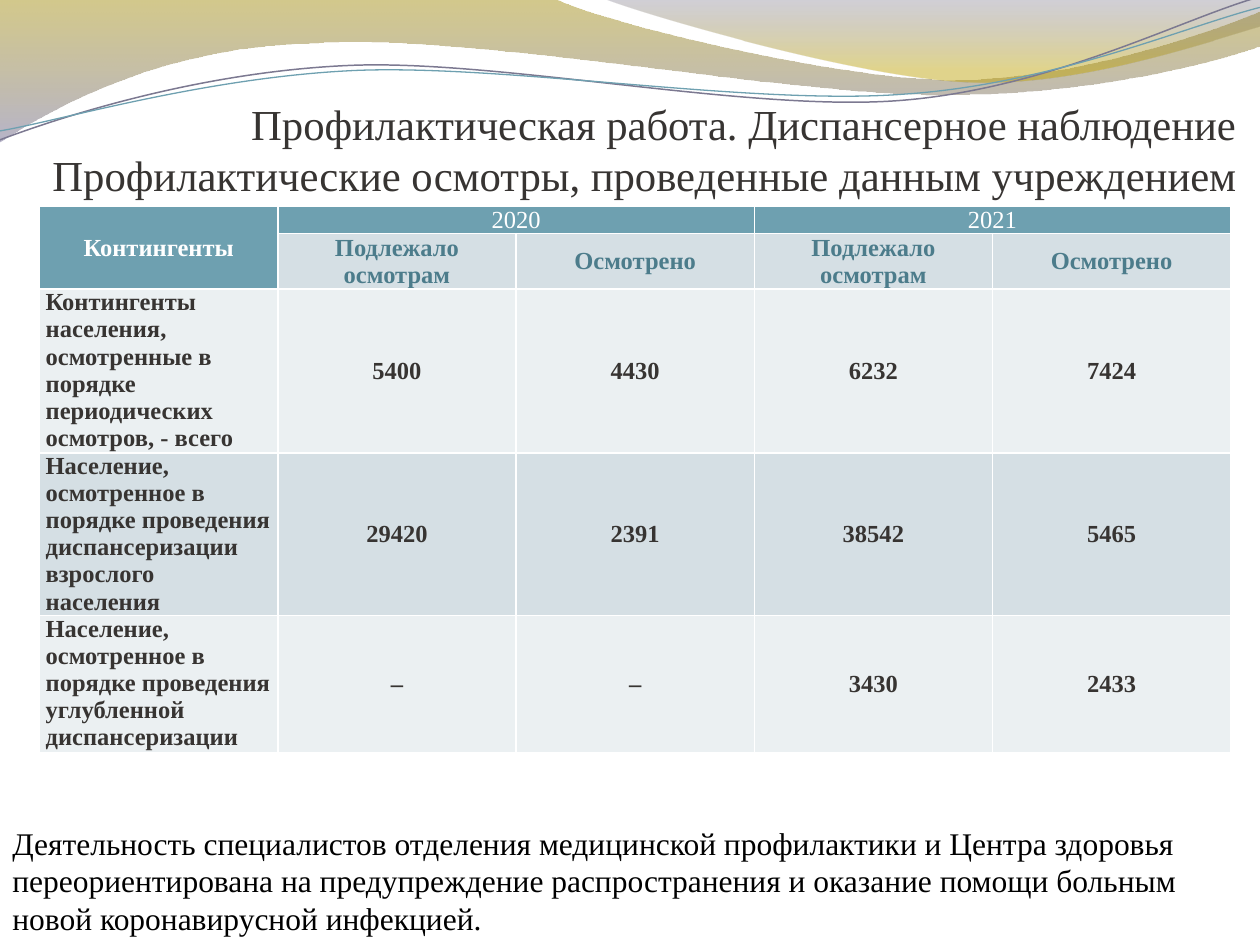
import pptx
import pptx.util
import pptx.dml.color
import pptx.enum.text
import pptx.oxml
import pptx.oxml.ns

Cm, Pt = pptx.util.Cm, pptx.util.Pt
Align, Anchor = pptx.enum.text.PP_ALIGN, pptx.enum.text.MSO_ANCHOR
Fit = pptx.enum.text.MSO_AUTO_SIZE
SPACE = pptx.oxml.ns.nsdecls("a")

INK = {
    "olive": "9E8700", "mauve": "7B769C", "plum": "66627C", "gold": "BDA100",
    "violet": "7C7991", "teal": "6EA0B0", "deep": "4C7C8B", "dark": "373432",
    "pale": "EBF0F2", "mist": "D5DFE4", "white": "FFFFFF", "black": "000000",
}

# Wave outlines in cm: a pair is a corner, six numbers are a Bezier curve
BANDS = [
    ([(0, 0), (11.18, -0.03), (12.09, 0.43, 16.87, 1.6, 19.25, 1.6),
      (21.67, 1.6, 24.33, 0.66, 25.4, 0.23), (25.43, 0.91),
      (24.97, 1.12, 22.1, 1.93, 18.95, 1.91),
      (15.8, 1.91, 9.7, 0.71, 6.53, 0.86),
      (3.28, 0.91, 1.17, 2.11, -0.03, 2.87)],
     [(0, "olive", 45), (1, "mauve", 55)]),
    ([(12.17, -0.03), (12.93, 0.28, 17.32, 1.57, 19.53, 1.65),
      (21.74, 1.75, 24.41, 0.81, 25.4, 0.53), (25.4, 0)],
     [(0, "plum", 30), (0.8, "gold", 45)]),
]
LINES = [
    ([(0, 2.82), (1.22, 2.36, 4.01, 1.45, 7.04, 1.32),
      (10.03, 1.19, 15.06, 2.26, 18.11, 2.03),
      (21.16, 1.8, 23.83, 0.38, 25.35, -0.05)], "violet", 0.85),
    ([(0, 2.64), (1.19, 2.44, 4.17, 1.55, 7.19, 1.42),
      (10.24, 1.3, 15.16, 2.13, 18.21, 1.9),
      (21.23, 1.7, 23.9, 0.53, 25.4, 0.15)], "teal", 0.75),
]

HEAD = "Профилактическая работа. Диспансерное наблюдение\vПрофилактические осмотры, проведенные данным учреждением"
NOTE = "Деятельность специалистов отделения медицинской профилактики и Центра здоровья переориентирована на предупреждение распространения и оказание помощи больным новой коронавирусной инфекцией."
ROWS = [
    ["Контингенты", "2020", "", "2021", ""],
    ["", *["Подлежало осмотрам", "Осмотрено"] * 2],
    ["Контингенты населения, осмотренные в порядке периодических осмотров, - всего",
     "5400", "4430", "6232", "7424"],
    ["Население, осмотренное в порядке проведения диспансеризации взрослого населения",
     "29420", "2391", "38542", "5465"],
    ["Население, осмотренное в порядке проведения углубленной диспансеризации",
     "–", "–", "3430", "2433"],
]
TALL = [0.53, 1.12, 3.3, 3.28, 2.77]


def tint(name):
    return pptx.dml.color.RGBColor.from_string(INK[name])


def assign(item, values):
    for key, value in values.items():
        setattr(item, key, value)


def write(frame, text, ink, font, para):
    frame.text = text
    assign(frame.paragraphs[0], para)
    for run in frame.paragraphs[0].runs:
        assign(run.font, {"name": "Times New Roman", **font})
        run.font.color.rgb = tint(ink)


def draw(slide, box, parts, close):
    dots = [(box[0] + Cm(part[i]), box[1] + Cm(part[i + 1]))
            for part in parts for i in range(0, len(part), 2)]
    pen = slide.shapes.build_freeform(*dots[0])
    pen.add_line_segments(dots[1:], close=close)
    shape = pen.convert_to_shape()
    shape.shadow.inherit = False
    # Join each three segments of a curve into one Bezier
    sides = iter(shape._element.spPr.xpath(".//a:lnTo"))
    for part in parts[1:]:
        trio = [next(sides) for _ in range(len(part) // 2)]
        if len(trio) == 3:
            curve = pptx.oxml.parse_xml(f"<a:cubicBezTo {SPACE}/>")
            trio[0].addprevious(curve)
            for side in trio:
                curve.append(side[0])
                side.getparent().remove(side)
    return shape


def add_waves(slide, box):
    # Translucent bands
    for parts, stops in BANDS:
        shape = draw(slide, box, parts, True)
        shape.line.fill.background()
        shape.fill.gradient()
        shape.fill.gradient_angle = 270
        for stop, (place, ink, _) in zip(shape.fill.gradient_stops, stops):
            stop.position = place
            stop.color.rgb = tint(ink)
        marks = shape._element.spPr.xpath(".//a:gradFill//a:srgbClr")
        for mark, (_, _, alpha) in zip(marks, stops):
            mark.append(pptx.oxml.parse_xml(f'<a:alpha {SPACE} val="{alpha * 1000}"/>'))
    # Thin lines
    for parts, ink, width in LINES:
        shape = draw(slide, box, parts, False)
        shape.fill.background()
        shape.line.color.rgb = tint(ink)
        shape.line.width = Pt(width)


def add_title(slide, box):
    title = slide.shapes.title
    slide.shapes._spTree.append(title._element)  # above the waves
    assign(title, dict(zip(("left", "top", "width", "height"), box)))
    frame = title.text_frame
    assign(frame, {"margin_left": 0, "margin_right": 0, "margin_bottom": Cm(1.96),
                   "vertical_anchor": Anchor.BOTTOM, "word_wrap": True,
                   "auto_size": Fit.NONE})
    write(frame, HEAD, "dark", {"size": Pt(24.4)}, {"alignment": Align.RIGHT})


def edge(cell):
    props = cell._tc.get_or_add_tcPr()
    for at, side in enumerate(("lnL", "lnR", "lnT", "lnB")):
        props.insert(at, pptx.oxml.parse_xml(
            f'<a:{side} {SPACE} w="12700"><a:solidFill>'
            f'<a:srgbClr val="{INK["white"]}"/></a:solidFill></a:{side}>'))


def add_grid(slide, box):
    grid = slide.shapes.add_table(len(ROWS), len(ROWS[0]), *box).table
    for col in grid.columns:
        col.width = box[2] // len(ROWS[0])
    for row, tall in zip(grid.rows, TALL):
        row.height = Cm(tall)
    # Header spans
    for first, last in (((0, 0), (1, 0)), ((0, 1), (0, 2)), ((0, 3), (0, 4))):
        grid.cell(*first).merge(grid.cell(*last))
    for r, texts in enumerate(ROWS):
        for c, text in enumerate(texts):
            cell = grid.cell(r, c)
            top = r == 0 or (r == 1 and c == 0)
            label = r > 1 and c == 0
            assign(cell, {"margin_left": Cm(0.12), "margin_right": Cm(0.12),
                          "margin_top": 0, "margin_bottom": 0,
                          "vertical_anchor": Anchor.TOP if label else Anchor.MIDDLE})
            cell.fill.solid()
            cell.fill.fore_color.rgb = tint("teal" if top else "mist" if r % 2 else "pale")
            edge(cell)
            if text:
                ink = "white" if top else "deep" if r == 1 else "dark"
                write(cell.text_frame, text, ink,
                      {"size": Pt(14), "bold": r > 0 or c == 0},
                      {"alignment": Align.LEFT if label else Align.CENTER})


def add_note(slide, box):
    frame = slide.shapes.add_textbox(*box).text_frame
    assign(frame, {"word_wrap": True, "auto_size": Fit.SHAPE_TO_FIT_TEXT})
    write(frame, NOTE, "black", {"size": Pt(18)}, {})


def main():
    deck = pptx.Presentation()
    assign(deck, {"slide_width": Cm(25.4), "slide_height": Cm(19.05)})
    slide = deck.slides.add_slide(deck.slide_layouts[5])
    add_waves(slide, (Cm(0), Cm(0)))
    add_title(slide, (Cm(-5.56), Cm(0), Cm(30.48), Cm(5.99)))
    add_grid(slide, (Cm(0.8), Cm(4.16), Cm(24.01), Cm(sum(TALL))))
    add_note(slide, (Cm(0), Cm(16.48), Cm(25.4), Cm(2.57)))
    deck.save("out.pptx")


if __name__ == "__main__":
    main()
